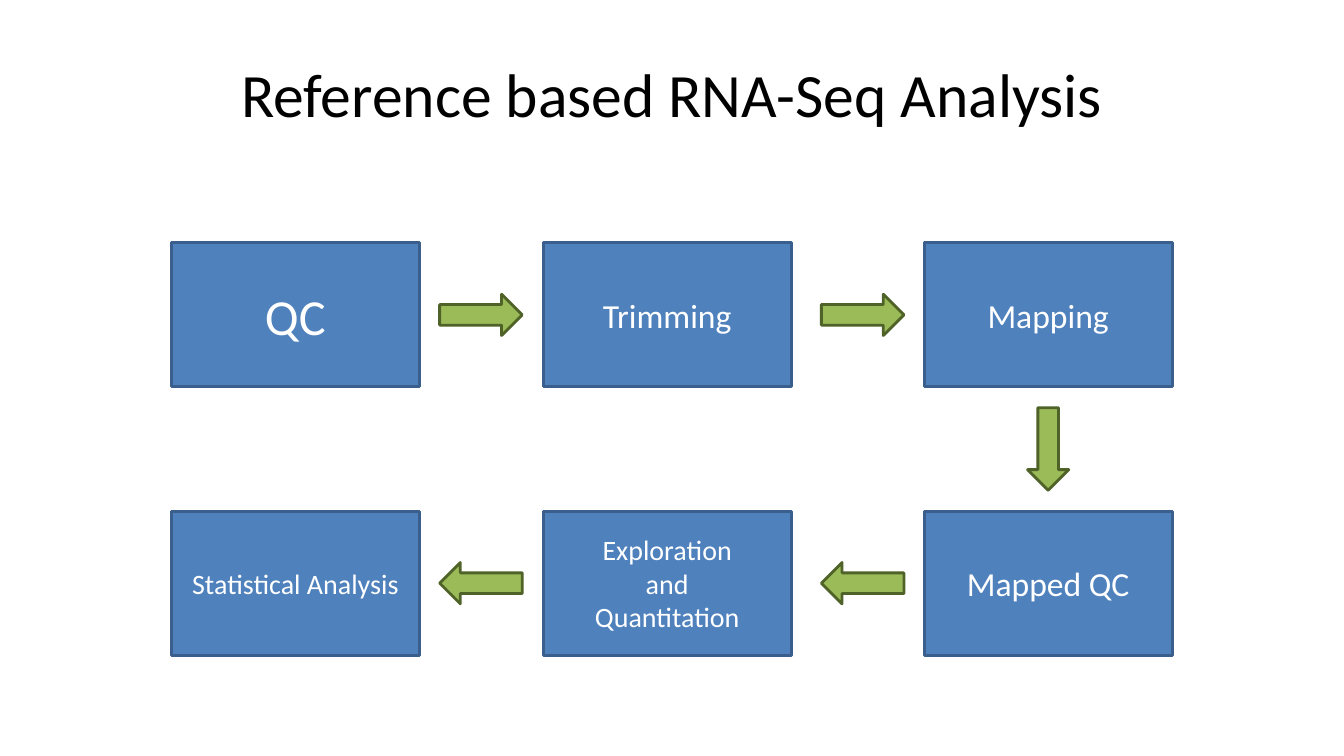
import dataclasses

import pptx
import pptx.dml.color
import pptx.enum.shapes
import pptx.enum.text
import pptx.util

Cm = pptx.util.Cm
Pt = pptx.util.Pt
MSO_SHAPE = pptx.enum.shapes.MSO_SHAPE


@dataclasses.dataclass(frozen=True)
class Theme:
    font: str = "Calibri"
    title_color: str = "000000"
    step_fill: str = "4F81BD"
    step_line: str = "3A5F8C"
    step_text: str = "FFFFFF"
    arrow_fill: str = "9BBB59"
    arrow_line: str = "4F6228"
    line_width: float = 2
    title_size: int = 44
    large_size: int = 36
    medium_size: int = 24
    small_size: int = 20


THEME = Theme()

# Step text, type size, column and row, in the order of the workflow
STEPS = [
    ("QC", THEME.large_size, 0, 0),
    ("Trimming", THEME.medium_size, 1, 0),
    ("Mapping", THEME.medium_size, 2, 0),
    ("Mapped QC", THEME.medium_size, 2, 1),
    ("Exploration\nand\nQuantitation", THEME.small_size, 1, 1),
    ("Statistical Analysis", THEME.small_size, 0, 1),
]
STEP_WIDTH, STEP_HEIGHT = Cm(6.25), Cm(3.63)
ARROW_LENGTH, ARROW_THICKNESS = Cm(2.08), Cm(1.04)
ARROW_GAP = Cm(0.51)
MIDDLE_COLUMN_OFFSET = Cm(9.37)


def rgb(color):
    return pptx.dml.color.RGBColor.from_string(color)


def write_text(shape, text, size, color):
    """Centre the text both ways and format every run."""
    text_frame = shape.text_frame
    text_frame.word_wrap = True
    text_frame.vertical_anchor = pptx.enum.text.MSO_ANCHOR.MIDDLE
    text_frame.text = text
    for paragraph in text_frame.paragraphs:
        paragraph.alignment = pptx.enum.text.PP_ALIGN.CENTER
        for run in paragraph.runs:
            run.font.name = THEME.font
            run.font.size = Pt(size)
            run.font.color.rgb = rgb(color)


def add_block(shapes, kind, left, top, width, height, fill, line):
    """Add a flat, outlined shape."""
    shape = shapes.add_shape(kind, left, top, width, height)
    shape.shadow.inherit = False
    shape.fill.solid()
    shape.fill.fore_color.rgb = rgb(fill)
    shape.line.color.rgb = rgb(line)
    shape.line.width = Pt(THEME.line_width)
    return shape


def add_arrow(shapes, center_x, center_y, rotation):
    arrow = add_block(shapes, MSO_SHAPE.RIGHT_ARROW,
                      center_x - ARROW_LENGTH // 2, center_y - ARROW_THICKNESS // 2,
                      ARROW_LENGTH, ARROW_THICKNESS, THEME.arrow_fill, THEME.arrow_line)
    arrow.rotation = rotation


def add_title(slide, left, top, width, height):
    title = slide.shapes.add_textbox(left, top, width, height)
    write_text(title, "Reference based RNA-Seq Analysis", THEME.title_size, THEME.title_color)


def add_workflow(slide, left, top, width, height):
    """Draw the steps in two rows, running right and then back left."""
    shapes = slide.shapes.add_group_shape().shapes
    columns = [left, left + MIDDLE_COLUMN_OFFSET, left + width - STEP_WIDTH]
    rows = [top, top + height - STEP_HEIGHT]

    # Steps
    for text, size, column, row in STEPS:
        step = add_block(shapes, MSO_SHAPE.RECTANGLE, columns[column], rows[row],
                         STEP_WIDTH, STEP_HEIGHT, THEME.step_fill, THEME.step_line)
        write_text(step, text, size, THEME.step_text)

    # Horizontal arrows, kept close to the outer columns
    arrow_reach = ARROW_GAP + ARROW_LENGTH // 2
    arrow_centers = [columns[0] + STEP_WIDTH + arrow_reach, columns[2] - arrow_reach]
    for row_top, rotation in zip(rows, (0, 180)):
        for center_x in arrow_centers:
            add_arrow(shapes, center_x, row_top + STEP_HEIGHT // 2, rotation)

    # Downward arrow between the rows
    add_arrow(shapes, columns[2] + STEP_WIDTH // 2, top + height // 2, 90)


def main():
    presentation = pptx.Presentation()
    presentation.slide_width = Cm(33.87)
    presentation.slide_height = Cm(19.05)
    slide = presentation.slides.add_slide(presentation.slide_layouts[6])
    add_title(slide, Cm(1.7), Cm(0.76), Cm(30.48), Cm(3.18))
    add_workflow(slide, Cm(4.32), Cm(6.12), Cm(25.22), Cm(10.39))
    presentation.save("out.pptx")


if __name__ == "__main__":
    main()
